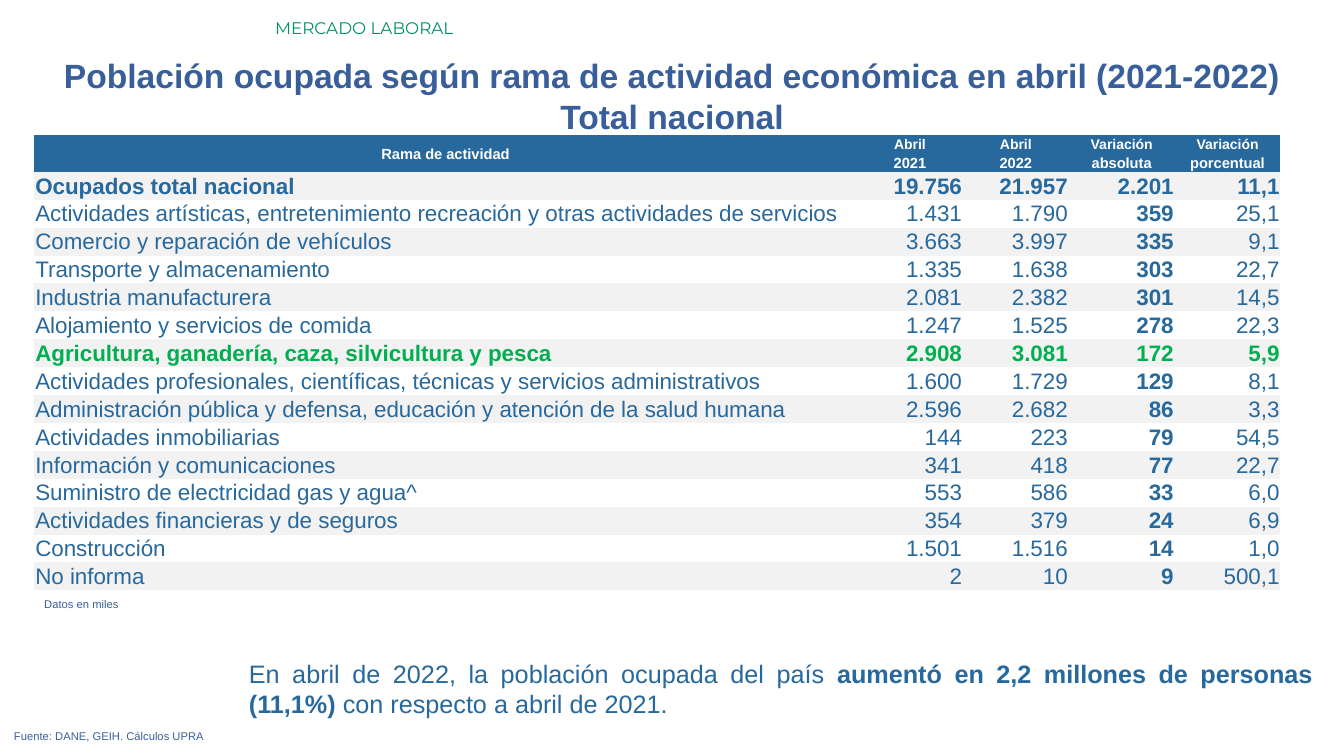
from dataclasses import dataclass

from pptx import Presentation
from pptx.dml.color import RGBColor
from pptx.enum.text import MSO_ANCHOR, PP_ALIGN
from pptx.slide import Slide
from pptx.table import Table, _Cell
from pptx.text.text import _Paragraph
from pptx.util import Inches, Length, Pt

# The slide is a grid of square modules, 133.3 columns by 75 rows.
MODULE = 0.1
SLIDE_COLUMNS, SLIDE_ROWS = 133.3, 75

COLORS = {
    "white": "FFFFFF",
    "band": "F2F2F2",
    "blue": "27689D",
    "title": "395F9B",
    "green": "009267",
    "highlight": "00B050",
}
PLAIN_TABLE_STYLE = "{2D5ABB26-0587-4C30-8999-92F81FD0307C}"


@dataclass(frozen=True)
class Span:
    text: str
    bold: bool = False


@dataclass(frozen=True)
class TextBlock:
    column: float
    row: float
    columns: float
    rows: float
    paragraphs: tuple[tuple[Span, ...], ...]
    size: float
    color: str
    align: PP_ALIGN = PP_ALIGN.JUSTIFY
    font: str = "Arial"


@dataclass(frozen=True)
class Branch:
    name: str
    figures: str
    bold: bool = False
    color: str = "blue"


TEXT_BLOCKS = (
    TextBlock(26.3, 1.3, 107, 3, ((Span("MERCADO LABORAL"),),),
              12, "green", PP_ALIGN.LEFT, "Montserrat"),
    TextBlock(0, 5, SLIDE_COLUMNS, 9.1, (
        (Span("Población ocupada según rama de actividad económica en abril (2021-2022)", True),),
        (Span("Total nacional", True),),
    ), 24, "title", PP_ALIGN.CENTER),
    TextBlock(23.7, 64.8, 107.5, 7.1, ((
        Span("En abril de 2022, la población ocupada del país "),
        Span("aumentó en 2,2 millones de personas (11,1%) ", True),
        Span("con respecto a abril de 2021."),
    ),), 18, "blue"),
    TextBlock(0.4, 71.9, 129.1, 2.4, ((Span("Fuente: DANE, GEIH. Cálculos UPRA"),),), 8, "title"),
    TextBlock(3.4, 58.8, 129.1, 2.4, ((Span("Datos en miles"),),), 8, "title"),
)

TABLE_COLUMN, TABLE_ROW = 3.4, 13.4
NAME_COLUMNS, FIGURE_COLUMNS = 81.6, 10.5
HEADER_ROWS, BODY_ROWS = 1.8, 2.77

HEADERS = (("Abril", "2021"), ("Abril", "2022"),
           ("Variación", "absoluta"), ("Variación", "porcentual"))
ABSOLUTE_CHANGE = 3

BRANCHES = (
    Branch("Ocupados total nacional", "19.756 21.957 2.201 11,1", bold=True),
    Branch("Actividades artísticas, entretenimiento recreación y otras actividades de servicios",
           "1.431 1.790 359 25,1"),
    Branch("Comercio y reparación de vehículos", "3.663 3.997 335 9,1"),
    Branch("Transporte y almacenamiento", "1.335 1.638 303 22,7"),
    Branch("Industria manufacturera", "2.081 2.382 301 14,5"),
    Branch("Alojamiento y servicios de comida", "1.247 1.525 278 22,3"),
    Branch("Agricultura, ganadería, caza, silvicultura y pesca",
           "2.908 3.081 172 5,9", bold=True, color="highlight"),
    Branch("Actividades profesionales, científicas, técnicas y servicios administrativos",
           "1.600 1.729 129 8,1"),
    Branch("Administración pública y defensa, educación y atención de la salud humana",
           "2.596 2.682 86 3,3"),
    Branch("Actividades inmobiliarias", "144 223 79 54,5"),
    Branch("Información y comunicaciones", "341 418 77 22,7"),
    Branch("Suministro de electricidad gas y agua^", "553 586 33 6,0"),
    Branch("Actividades financieras y de seguros", "354 379 24 6,9"),
    Branch("Construcción", "1.501 1.516 14 1,0"),
    Branch("No informa", "2 10 9 500,1"),
)


def modules(count: float) -> Length:
    """Convert grid columns or rows to a length."""
    return Inches(count * MODULE)


def add_span(para: _Paragraph, span: Span, size: float, color: str, font: str = "Arial") -> None:
    run = para.add_run()
    run.text = span.text
    run.font.name = font
    run.font.size = Pt(size)
    run.font.bold = span.bold
    run.font.color.rgb = RGBColor.from_string(COLORS[color])


def add_text_block(page: Slide, block: TextBlock) -> None:
    box = page.shapes.add_textbox(modules(block.column), modules(block.row),
                                  modules(block.columns), modules(block.rows))
    frame = box.text_frame
    frame.word_wrap = True
    for index, spans in enumerate(block.paragraphs):
        para = frame.add_paragraph() if index else frame.paragraphs[0]
        para.alignment = block.align
        for span in spans:
            add_span(para, span, block.size, block.color, block.font)


def fill_cell(cell: _Cell, span: Span, size: float, color: str,
              align: PP_ALIGN, fill: str | None) -> None:
    cell.margin_left = cell.margin_right = cell.margin_top = Inches(0.01)
    cell.margin_bottom = 0
    cell.vertical_anchor = MSO_ANCHOR.MIDDLE
    if fill:
        cell.fill.solid()
        cell.fill.fore_color.rgb = RGBColor.from_string(COLORS[fill])
    else:
        cell.fill.background()
    para = cell.text_frame.paragraphs[0]
    para.alignment = align
    add_span(para, span, size, color)


def fill_header(table: Table) -> None:
    table.cell(0, 0).merge(table.cell(1, 0))
    fill_cell(table.cell(0, 0), Span("Rama de actividad", True), 10.5, "white",
              PP_ALIGN.CENTER, "blue")
    for column, lines in enumerate(HEADERS, start=1):
        for row, (line, size) in enumerate(zip(lines, (10, 10.5))):
            fill_cell(table.cell(row, column), Span(line, True), size, "white",
                      PP_ALIGN.CENTER, "blue")


def fill_branches(table: Table) -> None:
    for index, branch in enumerate(BRANCHES):
        fill = None if index % 2 else "band"
        for column, text in enumerate((branch.name, *branch.figures.split())):
            span = Span(text, branch.bold or column == ABSOLUTE_CHANGE)
            align = PP_ALIGN.RIGHT if column else PP_ALIGN.LEFT
            fill_cell(table.cell(index + 2, column), span, 16, branch.color, align, fill)


def add_branch_table(page: Slide) -> None:
    widths = [NAME_COLUMNS] + [FIGURE_COLUMNS] * len(HEADERS)
    heights = [HEADER_ROWS] * 2 + [BODY_ROWS] * len(BRANCHES)
    frame = page.shapes.add_table(len(heights), len(widths),
                                  modules(TABLE_COLUMN), modules(TABLE_ROW),
                                  modules(sum(widths)), modules(sum(heights)))
    table = frame.table
    table.first_row = table.horz_banding = False
    table._tbl.tblPr[0].text = PLAIN_TABLE_STYLE
    for column, width in zip(table.columns, widths):
        column.width = modules(width)
    for row, height in zip(table.rows, heights):
        row.height = modules(height)
    fill_header(table)
    fill_branches(table)


def main() -> None:
    deck = Presentation()
    deck.slide_width = modules(SLIDE_COLUMNS)
    deck.slide_height = modules(SLIDE_ROWS)
    page = deck.slides.add_slide(deck.slide_layouts[6])
    for block in TEXT_BLOCKS:
        add_text_block(page, block)
    add_branch_table(page)
    deck.save("out.pptx")


if __name__ == "__main__":
    main()
